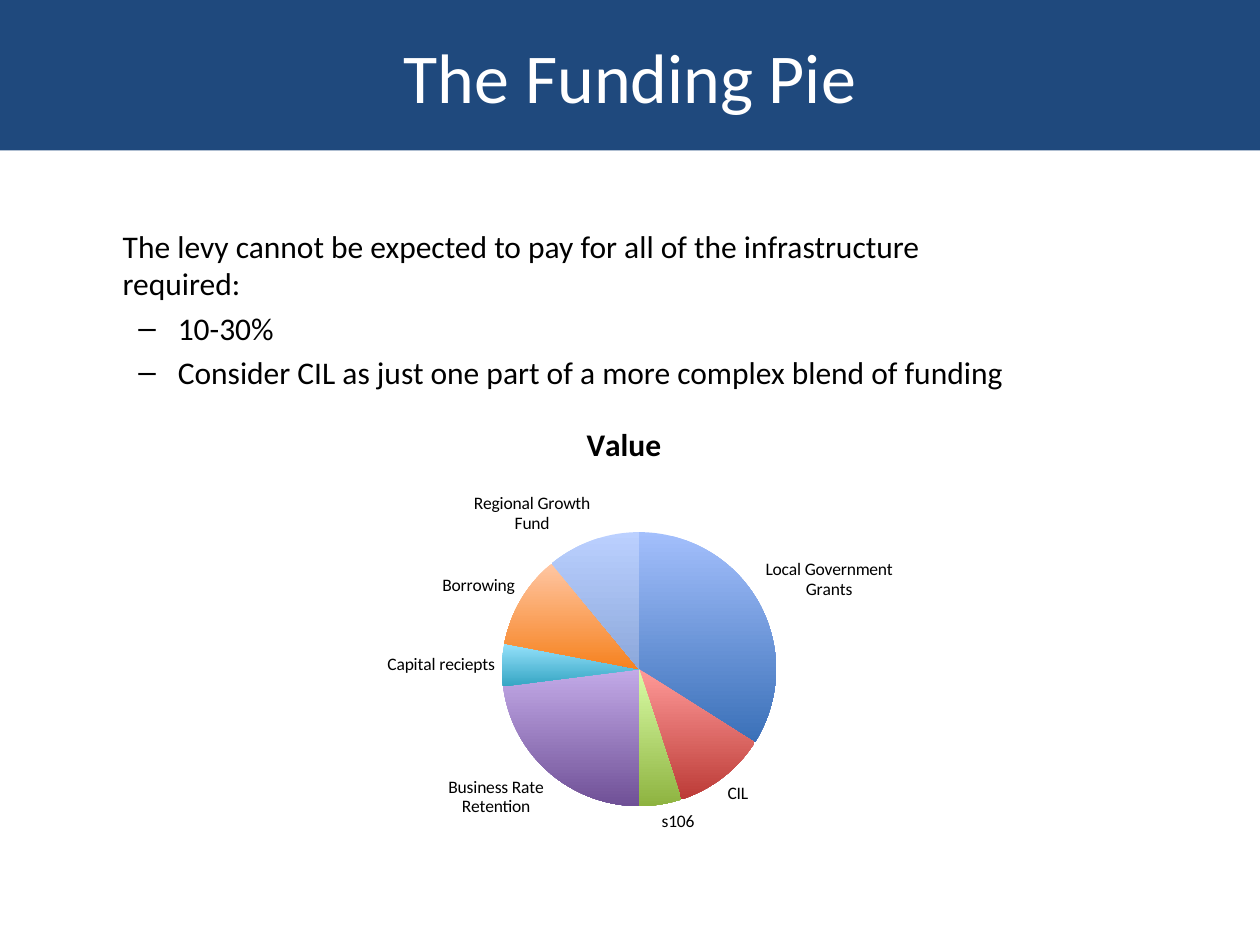
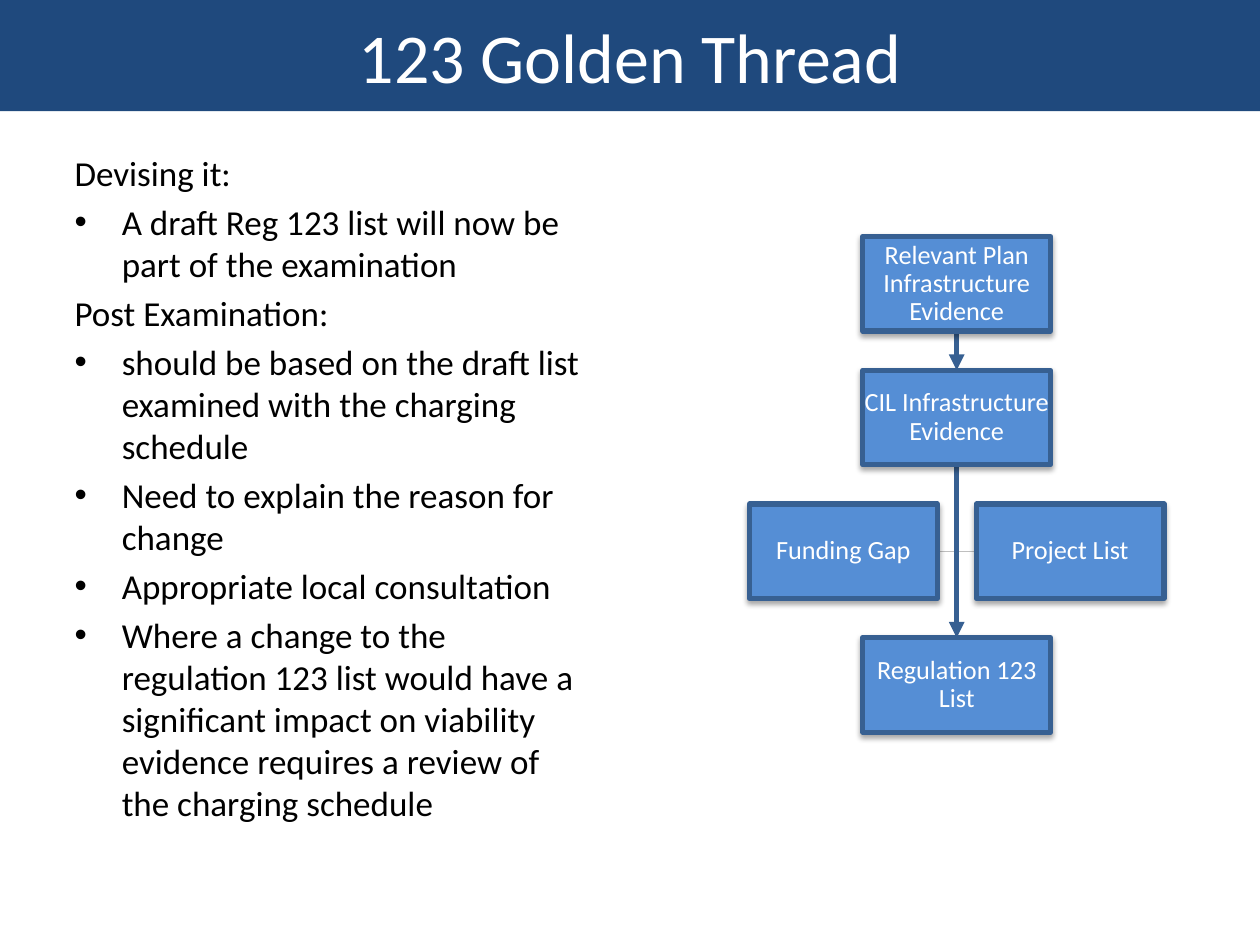
"""Build two slides: a funding pie and the Regulation 123 golden thread."""
from lxml import etree
from pptx import Presentation
from pptx import util as u
from pptx.chart.data import CategoryChartData
from pptx.dml.color import RGBColor
from pptx.enum import chart as charts, shapes, text
from pptx.oxml import parse_xml
from pptx.oxml.ns import nsdecls, qn

Pt = u.Pt
FONT = "Calibri"
NAVY, BLUE, EDGE, GREY = "1F497D", "558ED5", "376092", "BFBFBF"
WHITE, BLACK = "FFFFFF", "000000"


def rgb(code):
    """Return the colour for a hex string."""
    return RGBColor.from_string(code)


def style(paragraph, size, colour):
    """Format every run of a paragraph."""
    for span in paragraph.runs:
        span.font.name = FONT
        span.font.size = Pt(size)
        span.font.color.rgb = rgb(colour)


deck = Presentation()
deck.slide_width, deck.slide_height = Pt(720), Pt(540)

INTRO, ITEM, DASH = (27, 0, ""), (27, -27, "•"), (58.5, -22.5, "–")
HEADING = (0, 0, "")
outlines = [
    ("The Funding Pie", 86, (36, 126, 563, 136), 18, [
        (INTRO, "The levy cannot be expected to pay for all of the infrastructure required:"),
        (DASH, "10-30%"),
        (DASH, "Consider CIL as just one part of a more complex blend of funding"),
    ]),
    ("123 Golden Thread", 63.5, (35.5, 83, 311, 356), 20, [
        (HEADING, "Devising it:"),
        (ITEM, "A draft Reg 123 list will now be part of the examination"),
        (HEADING, "Post Examination:"),
        (ITEM, "should be based on the draft list examined with the charging schedule"),
        (ITEM, "Need to explain the reason for change"),
        (ITEM, "Appropriate local consultation"),
        (ITEM, "Where a change to the regulation 123 list would have a significant impact "
               "on viability evidence requires a review of the charging schedule"),
    ]),
]

pages = []
for heading, band_height, place, size, lines in outlines:
    page = deck.slides.add_slide(deck.slide_layouts[5])
    pages.append(page)
    title = page.shapes.title
    title.left, title.top, title.width, title.height = Pt(0), Pt(0), Pt(720), Pt(band_height)
    title.fill.solid()
    title.fill.fore_color.rgb = rgb(NAVY)
    frame = title.text_frame
    frame.text = heading
    frame.auto_size = text.MSO_AUTO_SIZE.NONE
    frame.vertical_anchor = text.MSO_ANCHOR.MIDDLE
    frame.paragraphs[0].alignment = text.PP_ALIGN.CENTER
    style(frame.paragraphs[0], 40, WHITE)

    body = page.shapes.add_textbox(*map(Pt, place)).text_frame
    body.word_wrap = True
    body.text = "\n".join(line for _, line in lines)
    for number, (para, ((margin, indent, bullet), _)) in enumerate(zip(body.paragraphs, lines)):
        properties = para._p.get_or_add_pPr()
        properties.set("marL", str(Pt(margin)))
        properties.set("indent", str(Pt(indent)))
        if number:
            para.space_before = Pt(size * 0.2)
        if bullet:
            etree.SubElement(properties, qn("a:buFont")).set("typeface", "Arial")
            etree.SubElement(properties, qn("a:buChar")).set("char", bullet)
        style(para, size, BLACK)

funding_page, thread_page = pages

funding = [
    ("Local Government Grants", 34, "A3BFFC", "3A70B8"),
    ("CIL", 11, "FF9A98", "BC3B37"),
    ("s106", 5, "DAFDA7", "8EB340"),
    ("Business Rate Retention", 23, "C3AAE8", "6F5096"),
    ("Capital reciepts", 5, "96E2FC", "35A5C3"),
    ("Borrowing", 11, "FFC6A3", "F6821F"),
    ("Regional Growth Fund", 11, "BBD0FF", "8CA8DB"),
]
data = CategoryChartData()
data.categories = [source for source, *_ in funding]
data.add_series("Value", [share for _, share, *_ in funding])
pie = funding_page.shapes.add_chart(
    charts.XL_CHART_TYPE.PIE, Pt(139), Pt(229.5), Pt(435), Pt(257), data).chart
pie.has_legend = False
pie.font.name, pie.font.size = FONT, Pt(10)
pie.font.color.rgb = rgb(BLACK)
pie.has_title = True
pie.chart_title.text_frame.text = "Value"
style(pie.chart_title.text_frame.paragraphs[0], 18, BLACK)
pie.chart_title.text_frame.paragraphs[0].runs[0].font.bold = True

plot = pie.plots[0]
plot.vary_by_categories = True
plot.has_data_labels = True
labels = plot.data_labels
labels.show_category_name = True
labels.show_value = labels.show_percentage = False
labels.position = charts.XL_LABEL_POSITION.OUTSIDE_END
for number, (_, _, light, dark) in enumerate(funding):
    fill = plot.series[0].points[number].format.fill
    fill.gradient()
    fill.gradient_angle = 270
    for stop, shade in zip(fill.gradient_stops, (light, dark)):
        stop.color.rgb = rgb(shade)

area = pie._chartSpace.chart.plotArea
for old in area.findall(qn("c:layout")):
    area.remove(old)
area.insert(0, parse_xml(
    f'<c:layout {nsdecls("c")}><c:manualLayout><c:layoutTarget val="inner"/>'
    '<c:xMode val="edge"/><c:yMode val="edge"/><c:x val="0.34"/><c:y val="0.29"/>'
    '<c:w val="0.36"/><c:h val="0.61"/></c:manualLayout></c:layout>'))

CENTRE, TOP, STEP, WIDTH, HEIGHT, OFFSET = 546.7, 135.2, 76.4, 107.3, 54, 64.8
row_tops = [TOP + row * STEP for row in range(4)]
middle = row_tops[2] + HEIGHT / 2
links = [
    (CENTRE - OFFSET + WIDTH / 2, middle, CENTRE + OFFSET - WIDTH / 2, middle, GREY, 0.25),
    (CENTRE, row_tops[1] + HEIGHT, CENTRE, row_tops[3], EDGE, 3),
    (CENTRE, row_tops[0] + HEIGHT, CENTRE, row_tops[1], EDGE, 3),
]
for *ends, colour, weight in links:
    link = thread_page.shapes.add_connector(shapes.MSO_CONNECTOR.STRAIGHT, *map(Pt, ends))
    link.line.color.rgb = rgb(colour)
    link.line.width = Pt(weight)
    if colour == EDGE:
        etree.SubElement(link.line._get_or_add_ln(), qn("a:tailEnd")).set("type", "triangle")
    etree.SubElement(link._element.spPr, qn("a:effectLst"))

steps = [
    ("Relevant Plan Infrastructure Evidence", 0, 0),
    ("CIL Infrastructure Evidence", 1, 0),
    ("Regulation 123 List", 3, 0),
    ("Funding Gap", 2, -OFFSET),
    ("Project List", 2, OFFSET),
]
for label, row, shift in steps:
    box = thread_page.shapes.add_shape(
        shapes.MSO_SHAPE.RECTANGLE, Pt(CENTRE + shift - WIDTH / 2), Pt(row_tops[row]),
        Pt(WIDTH), Pt(HEIGHT))
    box.fill.solid()
    box.fill.fore_color.rgb = rgb(BLUE)
    box.line.color.rgb = rgb(EDGE)
    box.line.width = Pt(3)
    box._element.spPr.append(parse_xml(
        f'<a:effectLst {nsdecls("a")}><a:outerShdw blurRad="{Pt(3.1)}" dist="{Pt(1.8)}" '
        'dir="5400000" rotWithShape="0"><a:srgbClr val="000000"><a:alpha val="35000"/>'
        '</a:srgbClr></a:outerShdw></a:effectLst>'))
    frame = box.text_frame
    frame.margin_left = frame.margin_right = frame.margin_top = frame.margin_bottom = Pt(0.75)
    frame.word_wrap = True
    frame.vertical_anchor = text.MSO_ANCHOR.MIDDLE
    frame.text = label
    frame.paragraphs[0].alignment = text.PP_ALIGN.CENTER
    frame.paragraphs[0].line_spacing = 0.9
    style(frame.paragraphs[0], 15, WHITE)

deck.save("out.pptx")
